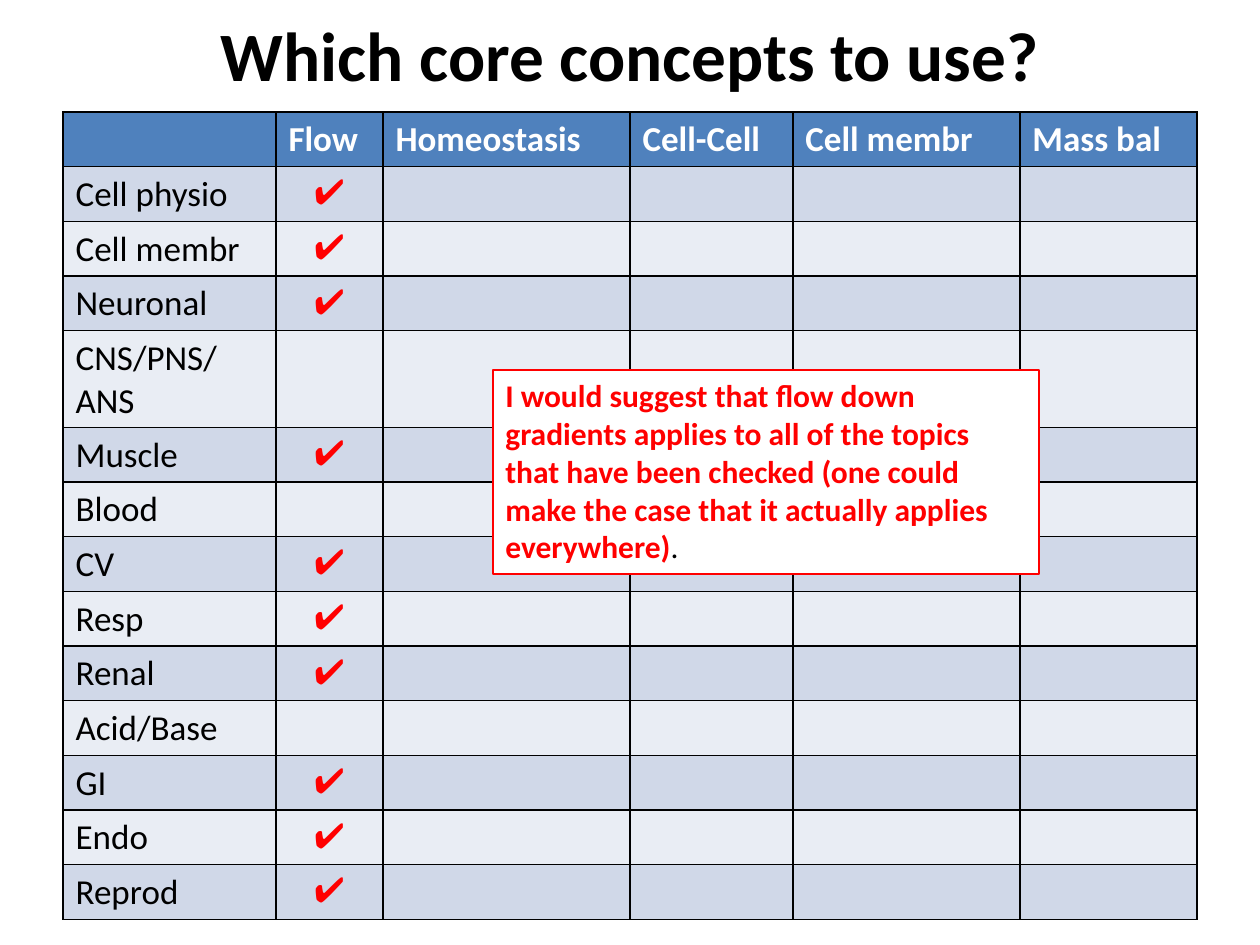
from lxml import etree
from pptx import Presentation
from pptx.dml.color import RGBColor
from pptx.enum.shapes import MSO_SHAPE
from pptx.enum.text import MSO_ANCHOR, PP_ALIGN
from pptx.oxml.ns import qn
from pptx.util import Emu, Pt

LEFT, CENTER = PP_ALIGN.LEFT, PP_ALIGN.CENTER
TOP, MIDDLE = MSO_ANCHOR.TOP, MSO_ANCHOR.MIDDLE
RECT = MSO_SHAPE.RECTANGLE
SCALE = 914400 // 126

TITLE = "Which core concepts to use?"
HEADS = ["", "Flow", "Homeostasis", "Cell-Cell", "Cell membr", "Mass bal"]
TOPICS = [
    ("Cell physio", True), ("Cell membr", True), ("Neuronal", True),
    ("CNS/PNS/ANS", False), ("Muscle", True), ("Blood", False),
    ("CV", True), ("Resp", True), ("Renal", True), ("Acid/Base", False),
    ("GI", True), ("Endo", True), ("Reprod", True),
]
NOTE = ("I would suggest that flow down gradients applies to all of the topics "
        "that have been checked (one could make the case that it actually "
        "applies everywhere)")
WIDTHS = [213, 107, 247, 163, 227, 177]
ROW = 52
BLACK, WHITE, RED, BLUE = "000000", "FFFFFF", "FF0000", "4F81BD"
BANDS = ["D0D8E8", "E9EDF4"]


def px(n):
    return Emu(n * SCALE)


def color(code):
    return RGBColor.from_string(code)


def write(frame, text, size=20, font="Calibri", ink=BLACK, bold=False, align=LEFT):
    """Add a run to the frame's first paragraph."""
    para = frame.paragraphs[0]
    para.alignment = align
    run = para.add_run()
    run.text = text
    run.font.size = Pt(size)
    run.font.name = font
    run.font.bold = bold
    run.font.color.rgb = color(ink)


def paint(cell, fill):
    """Give a cell thin black borders and a solid fill."""
    props = cell._tc.get_or_add_tcPr()
    for side in ("lnL", "lnR", "lnT", "lnB"):
        line = etree.SubElement(props, qn("a:" + side), w=str(Pt(1)))
        solid = etree.SubElement(line, qn("a:solidFill"))
        etree.SubElement(solid, qn("a:srgbClr"), val=BLACK)
    cell.fill.solid()
    cell.fill.fore_color.rgb = color(fill)


deck = Presentation()
deck.slide_width, deck.slide_height = px(1260), px(945)
slide = deck.slides.add_slide(deck.slide_layouts[6])
shapes = slide.shapes

title = shapes.add_textbox(px(63), px(10), px(1134), px(87)).text_frame
title.word_wrap = True
title.vertical_anchor = MIDDLE
write(title, TITLE, size=39.6, bold=True, align=CENTER)

count = len(TOPICS) + 1
table = shapes.add_table(count, len(HEADS), px(63), px(112),
                         px(sum(WIDTHS)), px(ROW * count)).table
for col, width in zip(table.columns, WIDTHS):
    col.width = px(width)
for row in table.rows:
    row.height = px(ROW)
for c, head in enumerate(HEADS):
    paint(table.cell(0, c), BLUE)
    if head:
        write(table.cell(0, c).text_frame, head, ink=WHITE, bold=True)
for r, (topic, flow) in enumerate(TOPICS, 1):
    for c in range(len(HEADS)):
        paint(table.cell(r, c), BANDS[(r - 1) % 2])
    write(table.cell(r, 0).text_frame, topic)
    if flow:
        write(table.cell(r, 1).text_frame, "✔", font="Arial", ink=RED,
              bold=r == 1, align=CENTER)

box = shapes.add_shape(RECT, px(493), px(370), px(546), px(204))
box.shadow.inherit = False
box.fill.solid()
box.fill.fore_color.rgb = color(WHITE)
box.line.color.rgb = color(RED)
box.line.width = Pt(1.5)
note = box.text_frame
note.word_wrap = True
note.vertical_anchor = TOP
write(note, NOTE, size=18, ink=RED, bold=True)
write(note, ".", size=18)

deck.save("out.pptx")
